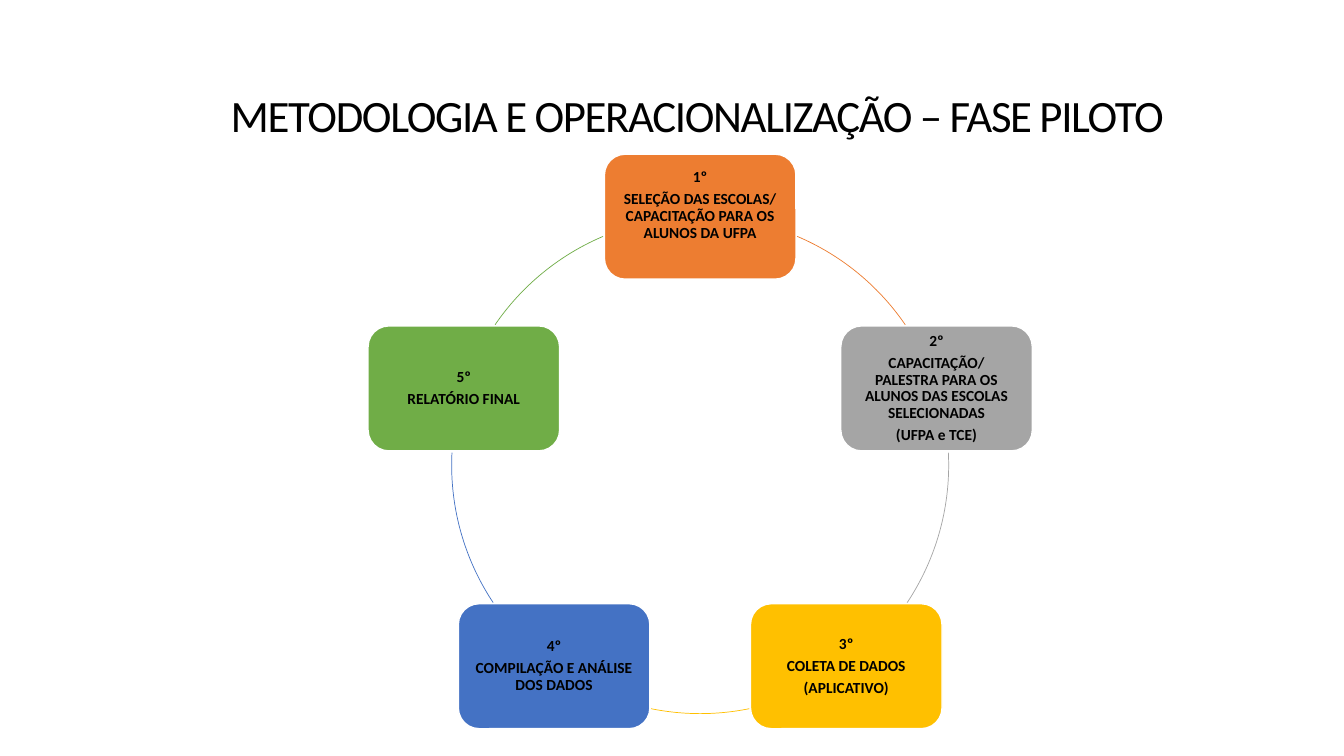
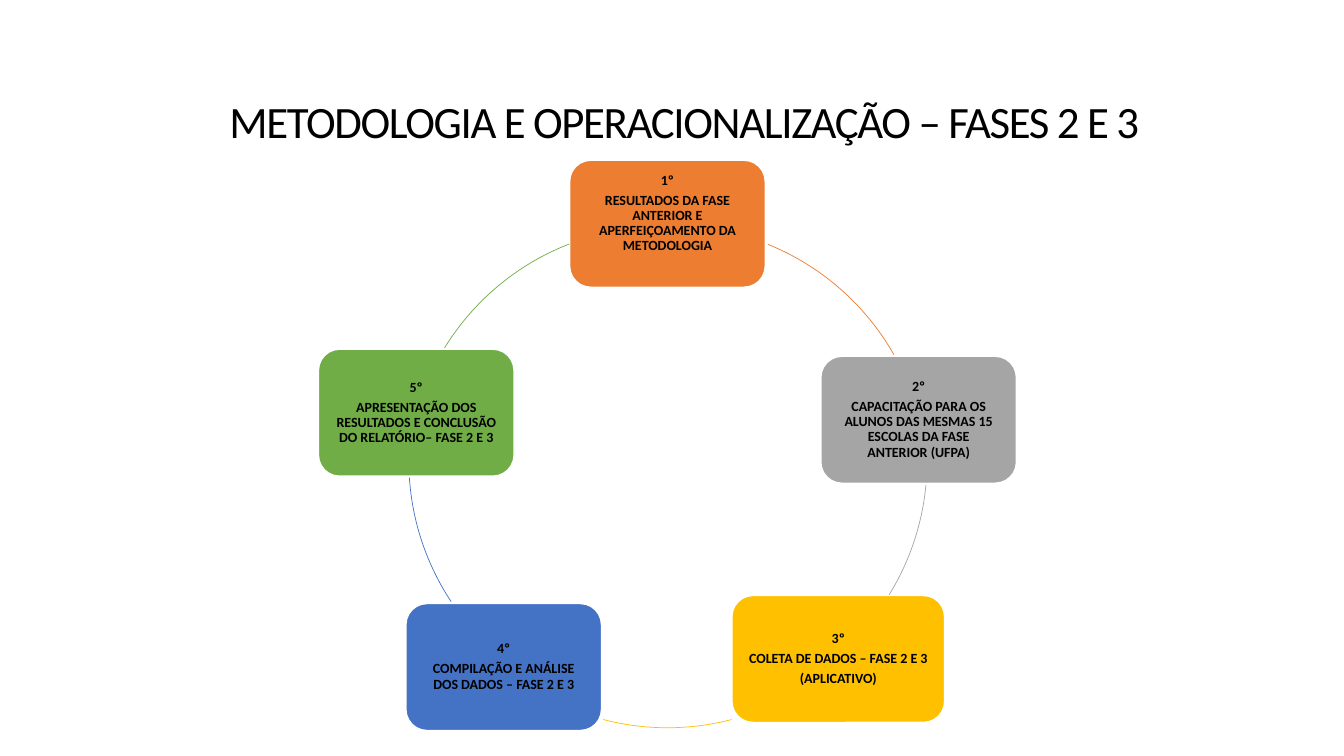
from dataclasses import dataclass
from math import cos, radians, sin

from pptx import Presentation
from pptx.dml.color import RGBColor
from pptx.enum.shapes import MSO_SHAPE
from pptx.enum.text import MSO_ANCHOR, PP_ALIGN
from pptx.shapes.autoshape import Shape
from pptx.slide import Slide
from pptx.util import Emu, Inches, Pt

SLIDE_WIDTH, SLIDE_HEIGHT = Inches(13.33), Inches(7.5)
ROWS = 75  # square grid cells down the slide; every length below is in cells
CELL = SLIDE_HEIGHT / ROWS

FONT = "Calibri"
BLACK = RGBColor(0x00, 0x00, 0x00)
WHITE = RGBColor(0xFF, 0xFF, 0xFF)
ORANGE = RGBColor(0xED, 0x7D, 0x31)
GRAY = RGBColor(0xA5, 0xA5, 0xA5)
GOLD = RGBColor(0xFF, 0xC0, 0x00)
BLUE = RGBColor(0x44, 0x72, 0xC4)
GREEN = RGBColor(0x70, 0xAD, 0x47)
STAGE_COLORS = (ORANGE, GRAY, GOLD, BLUE, GREEN)

ARC = MSO_SHAPE.ARC
ROUNDED = MSO_SHAPE.ROUNDED_RECTANGLE
CENTER = PP_ALIGN.CENTER
MIDDLE = MSO_ANCHOR.MIDDLE

TITLE_WIDTH, TITLE_HEIGHT = 95.7, 6.6
TITLE_SIZE = 32
TITLE_SPACING = "-100"
ARC_ADJUSTMENT_PER_DEGREE = 0.6


@dataclass(frozen=True)
class Stage:
    """One box of the cycle and the arc that leaves it, angles clockwise from east."""

    lines: tuple[str, ...]
    arc_start: float
    arc_end: float
    box_shift: tuple[float, float] = (0, 0)
    arc_shift: tuple[float, float] = (0, 0)
    extra_width: float = 0
    extra_bottom: float = 0


@dataclass(frozen=True)
class Cycle:
    title: str
    title_left: float
    title_top: float
    center: tuple[float, float]
    radius: float
    box_size: tuple[float, float]
    inset: float
    text_size: int
    stages: tuple[Stage, ...]


CYCLES = (
    Cycle(
        "METODOLOGIA E OPERACIONALIZAÇÃO – FASE PILOTO", 21.3, 8.2,
        (69.45, 46.15), 24.65, (19, 12.4), 1.1, 11,
        (
            Stage(("1º", "SELEÇÃO DAS ESCOLAS/ CAPACITAÇÃO PARA OS ALUNOS DA UFPA"),
                  293, 325.6, extra_bottom=2.2),
            Stage(("2º", "CAPACITAÇÃO/PALESTRA PARA OS ALUNOS DAS ESCOLAS SELECIONADAS",
                   "(UFPA e TCE)"), 357.1, 33.6),
            Stage(("3º", "COLETA DE DADOS", "(APLICATIVO)"), 78.6, 101.4),
            Stage(("4º", "COMPILAÇÃO E ANÁLISE DOS DADOS"), 146.4, 182.9),
            Stage(("5º", "RELATÓRIO FINAL"), 214.4, 247),
        ),
    ),
    Cycle(
        "METODOLOGIA E OPERACIONALIZAÇÃO – FASES 2 E 3", 20, 8.8,
        (66.2, 47.45), 25.25, (19.4, 12.6), 1, 10,
        (
            Stage(("1º", "RESULTADOS DA FASE ANTERIOR E APERFEIÇOAMENTO DA METODOLOGIA"),
                  292, 330.4, arc_shift=(0.5, 0.2), extra_bottom=2),
            Stage(("2º", "CAPACITAÇÃO PARA OS ALUNOS DAS MESMAS 15 ESCOLAS DA FASE "
                   "ANTERIOR (UFPA)"), 5.4, 31.7, (0.9, 2), (0.5, -1.7)),
            Stage(("3º", "COLETA DE DADOS – FASE 2 E 3", "(APLICATIVO)"),
                  75.4, 104.6, (2.1, -2.5), (0, -0.5), extra_width=1.7),
            Stage(("4º", "COMPILAÇÃO E ANÁLISE DOS DADOS – FASE 2 E 3"),
                  146.5, 176.3, (-1.4, -1.7), (-0.4, -1.7)),
            Stage(("5º", "APRESENTAÇÃO DOS RESULTADOS E CONCLUSÃO DO RELATÓRIO– FASE 2 E 3"),
                  211.6, 248.8, (-0.9, 1.3), (-0.6, 0.3)),
        ),
    ),
)


def cells(count: float) -> Emu:
    return Emu(round(count * CELL))


def add_centered_shape(slide: Slide, kind: int, center: tuple[float, float],
                       width: float, height: float) -> Shape:
    x, y = center
    shape = slide.shapes.add_shape(kind, cells(x - width / 2), cells(y - height / 2),
                                   cells(width), cells(height))
    shape.shadow.inherit = False
    return shape


def add_title(slide: Slide, cycle: Cycle) -> None:
    box = slide.shapes.add_textbox(cells(cycle.title_left), cells(cycle.title_top),
                                   cells(TITLE_WIDTH), cells(TITLE_HEIGHT))
    box.text_frame.word_wrap = True
    paragraph = box.text_frame.paragraphs[0]
    paragraph.text = cycle.title
    paragraph.alignment = CENTER
    paragraph.font.name = FONT
    paragraph.font.size = Pt(TITLE_SIZE)
    paragraph.font.color.rgb = BLACK
    paragraph.runs[0]._r.get_or_add_rPr().set("spc", TITLE_SPACING)


def write_stage_text(shape: Shape, stage: Stage, cycle: Cycle) -> None:
    frame = shape.text_frame
    frame.word_wrap = True
    frame.vertical_anchor = MIDDLE
    frame.margin_left = frame.margin_right = frame.margin_top = cells(cycle.inset)
    frame.margin_bottom = cells(cycle.inset + stage.extra_bottom)
    frame.text = "\n".join(stage.lines)
    for paragraph in frame.paragraphs:
        paragraph.alignment = CENTER
        paragraph.line_spacing = 0.9
        paragraph.space_after = Pt(0.35 * cycle.text_size)
        paragraph.font.name = FONT
        paragraph.font.size = Pt(cycle.text_size)
        paragraph.font.bold = True
        paragraph.font.color.rgb = BLACK


def add_stage_box(slide: Slide, cycle: Cycle, stage: Stage, angle: float,
                  color: RGBColor) -> None:
    x, y = cycle.center
    shift_x, shift_y = stage.box_shift
    center = (x + cycle.radius * cos(radians(angle)) + shift_x,
              y + cycle.radius * sin(radians(angle)) + shift_y)
    width, height = cycle.box_size
    box = add_centered_shape(slide, ROUNDED, center, width + stage.extra_width, height)
    box.fill.solid()
    box.fill.fore_color.rgb = color
    box.line.color.rgb = WHITE
    box.line.width = Pt(1)
    write_stage_text(box, stage, cycle)


def add_stage_arc(slide: Slide, cycle: Cycle, stage: Stage, color: RGBColor) -> None:
    x, y = cycle.center
    shift_x, shift_y = stage.arc_shift
    diameter = 2 * cycle.radius
    arc = add_centered_shape(slide, ARC, (x + shift_x, y + shift_y), diameter, diameter)
    for index, angle in enumerate((stage.arc_start, stage.arc_end)):
        arc.adjustments[index] = angle * ARC_ADJUSTMENT_PER_DEGREE
    arc.fill.background()
    arc.line.color.rgb = color
    arc.line.width = Pt(0.5)


def add_cycle(slide: Slide, cycle: Cycle) -> None:
    """Place the stages clockwise at equal angles, starting at the top."""
    add_title(slide, cycle)
    step = 360 / len(cycle.stages)
    for index, (stage, color) in enumerate(zip(cycle.stages, STAGE_COLORS)):
        add_stage_box(slide, cycle, stage, index * step - 90, color)
        add_stage_arc(slide, cycle, stage, color)


def main() -> None:
    presentation = Presentation()
    presentation.slide_width = SLIDE_WIDTH
    presentation.slide_height = SLIDE_HEIGHT
    blank_layout = presentation.slide_layouts[6]
    for cycle in CYCLES:
        add_cycle(presentation.slides.add_slide(blank_layout), cycle)
    presentation.save("out.pptx")


if __name__ == "__main__":
    main()
